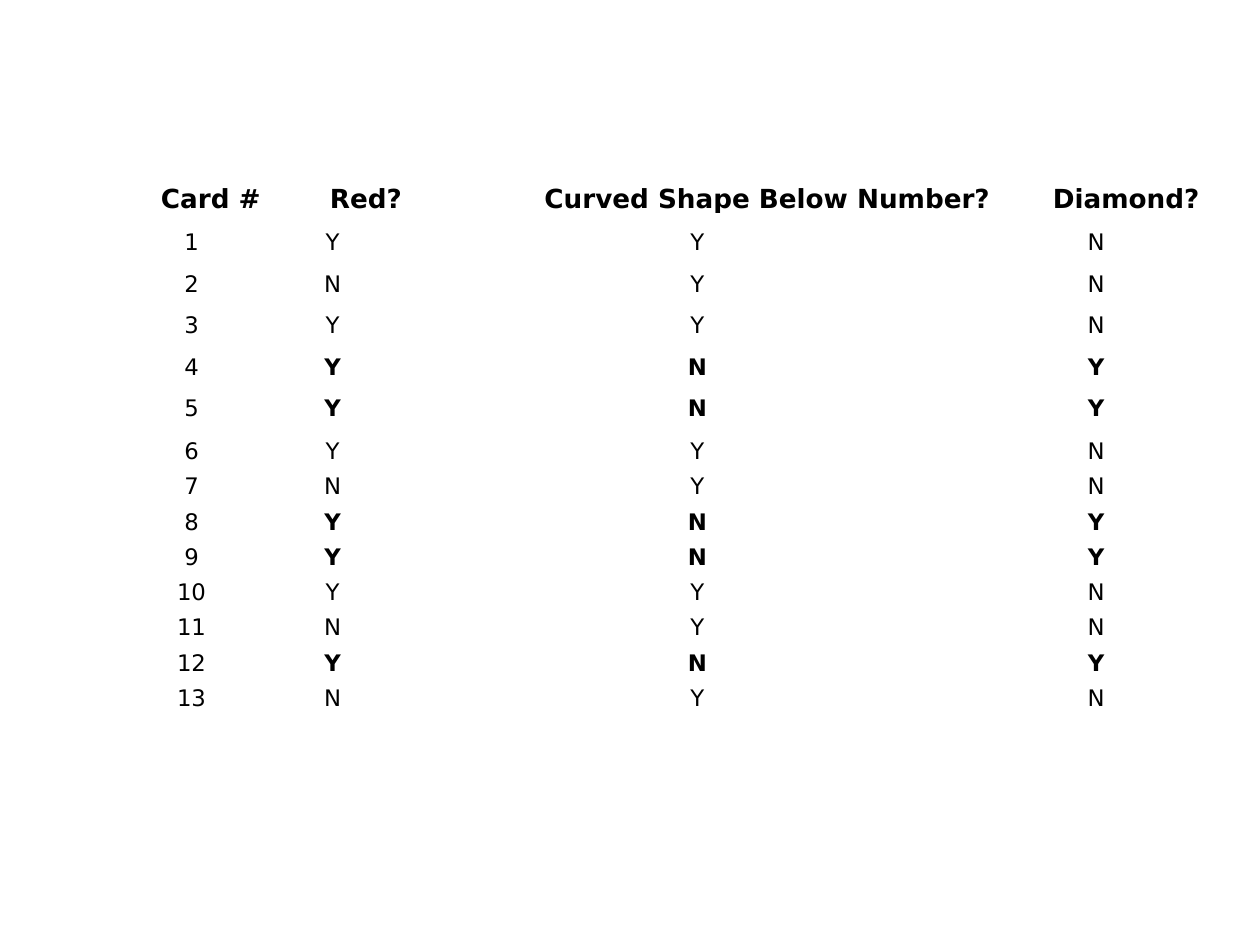
from pptx import Presentation
from pptx.dml.color import RGBColor
from pptx.enum.text import MSO_ANCHOR as Anchor, PP_ALIGN as Align
from pptx.util import Inches, Pt

BLACK = RGBColor(0, 0, 0)
FONT = "DejaVu Sans"
BLANK_LAYOUT = 6

# Table grid, in inches
LEFT, TOP = 0.96, 1.37
COLUMN_WIDTHS = [1.12, 1.12, 4.67, 1.66]
ROW_HEIGHTS = [0.33] * 6 + [0.34] + [0.28] * 7

HEADINGS = ["Card #", "Red?", "Curved Shape Below Number?", "Diamond?"]
RED = "YNYYYYNYYYNYN"
CURVED = "YYYNNYYNNYYNY"

CELL_FORMAT = {
    "vertical_anchor": Anchor.BOTTOM,
    "margin_left": Inches(0.01),
    "margin_right": Inches(0.01),
    "margin_top": Inches(0.01),
    "margin_bottom": 0,
}


def set_attributes(target, values):
    for name, value in values.items():
        setattr(target, name, value)


def write_cell(cell, text, size, bold, alignment):
    cell.fill.background()
    set_attributes(cell, CELL_FORMAT)
    paragraph = cell.text_frame.paragraphs[0]
    paragraph.alignment = alignment
    run = paragraph.add_run()
    run.text = text
    set_attributes(run.font, {"name": FONT, "size": Pt(size), "bold": bold})
    run.font.color.rgb = BLACK


def add_plain_table(slide):
    table = slide.shapes.add_table(
        len(ROW_HEIGHTS), len(COLUMN_WIDTHS), Inches(LEFT), Inches(TOP),
        Inches(sum(COLUMN_WIDTHS)), Inches(sum(ROW_HEIGHTS))).table
    set_attributes(table, {"first_row": False, "horz_banding": False})
    for column, width in zip(table.columns, COLUMN_WIDTHS):
        column.width = Inches(width)
    for row, height in zip(table.rows, ROW_HEIGHTS):
        row.height = Inches(height)
    return table


def fill_card_table(table):
    # Headings
    for column, heading in enumerate(HEADINGS):
        write_cell(table.cell(0, column), heading, 15, True, Align.RIGHT)

    # A card is a diamond when it is red without a curved shape
    for number, (red, curved) in enumerate(zip(RED, CURVED), start=1):
        is_diamond = red == "Y" and curved == "N"
        answers = [str(number), red, curved, "Y" if is_diamond else "N"]
        for column, answer in enumerate(answers):
            bold = is_diamond and column > 0
            write_cell(table.cell(number, column), answer, 13, bold, Align.CENTER)


def main():
    presentation = Presentation()
    presentation.slide_width = Inches(10)
    presentation.slide_height = Inches(7.5)
    slide = presentation.slides.add_slide(presentation.slide_layouts[BLANK_LAYOUT])
    fill_card_table(add_plain_table(slide))
    presentation.save("out.pptx")


if __name__ == "__main__":
    main()
